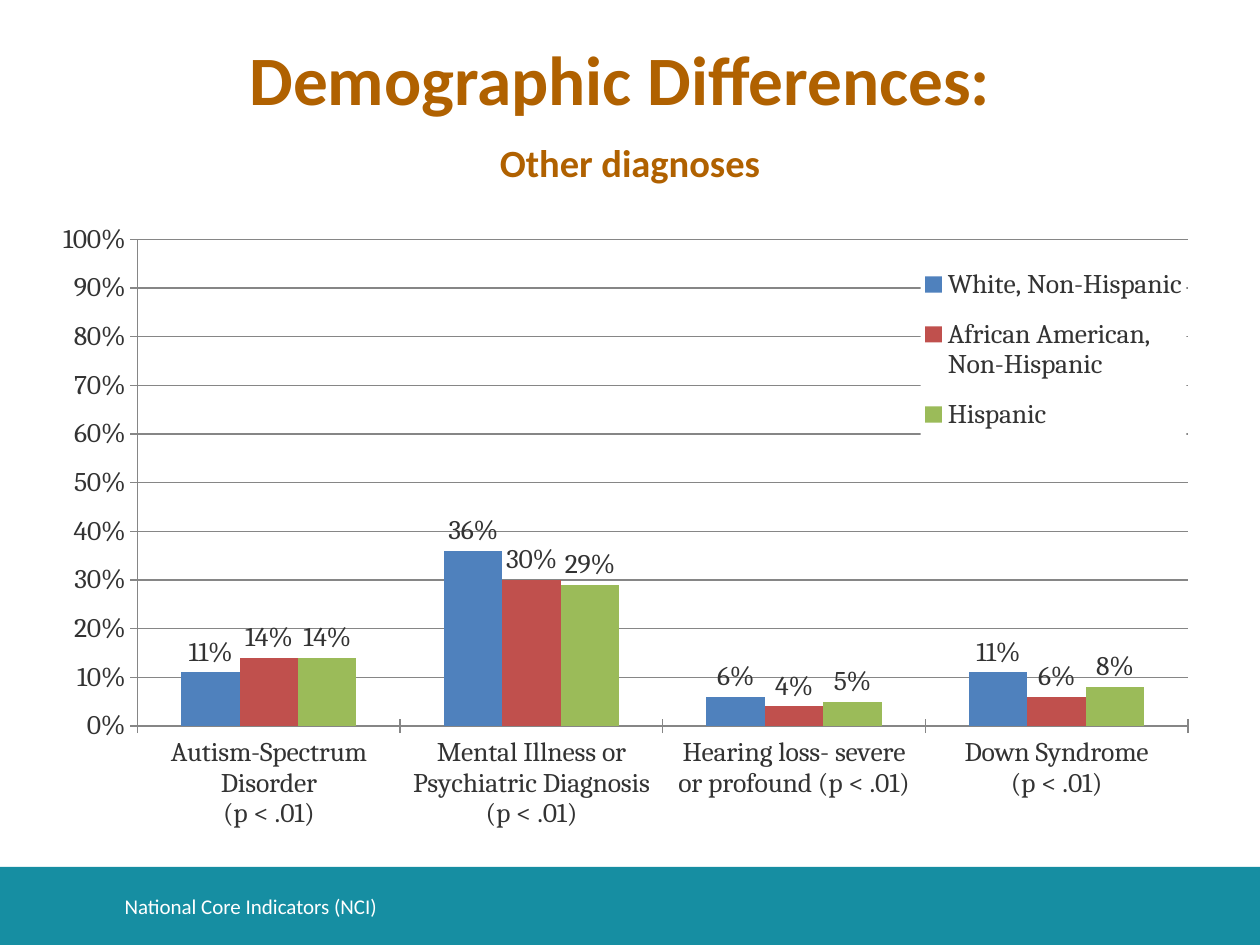
from pptx import Presentation
from pptx.chart.data import CategoryChartData
from pptx.dml.color import RGBColor
from pptx.enum.chart import XL_CHART_TYPE, XL_LABEL_POSITION, XL_LEGEND_POSITION, XL_TICK_MARK
from pptx.enum.shapes import MSO_SHAPE
from pptx.enum.text import MSO_ANCHOR, PP_ALIGN
from pptx.oxml import parse_xml
from pptx.oxml.ns import nsdecls
from pptx.util import Inches, Pt

TEAL = RGBColor(0x16, 0x8E, 0xA2)
BROWN = RGBColor(0xB0, 0x61, 0x00)
WHITE = RGBColor(0xFF, 0xFF, 0xFF)
DARK_GRAY = RGBColor(0x33, 0x33, 0x33)
AXIS_GRAY = RGBColor(0x86, 0x86, 0x86)
BLUE = RGBColor(0x4F, 0x81, 0xBD)
RED = RGBColor(0xC0, 0x50, 0x4D)
GREEN = RGBColor(0x9B, 0xBB, 0x59)

CATEGORIES = [
    "Autism-Spectrum Disorder\n(p < .01)",
    "Mental Illness or Psychiatric Diagnosis (p < .01)",
    "Hearing loss- severe or profound (p < .01)",
    "Down Syndrome\n(p < .01)",
]
SERIES = [
    ("White, Non-Hispanic", BLUE, (0.11, 0.36, 0.06, 0.11)),
    ("African American, Non-Hispanic", RED, (0.14, 0.30, 0.04, 0.06)),
    ("Hispanic", GREEN, (0.14, 0.29, 0.05, 0.08)),
]


def manual_layout(left, top, width, height, inner=False):
    """Return a chart layout element, in fractions of the chart area."""
    target = '<c:layoutTarget val="inner"/>' if inner else ""
    return parse_xml(
        f'<c:layout {nsdecls("c")}><c:manualLayout>{target}'
        '<c:xMode val="edge"/><c:yMode val="edge"/>'
        f'<c:x val="{left}"/><c:y val="{top}"/><c:w val="{width}"/><c:h val="{height}"/>'
        "</c:manualLayout></c:layout>"
    )


class DiagnosisSlide:
    text_font = "Calibri"
    chart_font = "Cambria"
    chart_size = Pt(16)

    def __init__(self, presentation):
        self.slide = presentation.slides.add_slide(presentation.slide_layouts[6])

    def band(self, left, top, width, height, color):
        shape = self.slide.shapes.add_shape(
            MSO_SHAPE.RECTANGLE, Inches(left), Inches(top), Inches(width), Inches(height))
        shape.shadow.inherit = False
        shape.fill.solid()
        shape.fill.fore_color.rgb = color
        shape.line.fill.background()

    def text(self, content, left, top, width, height, size, color,
             bold=False, align=PP_ALIGN.LEFT, line_spacing=None):
        box = self.slide.shapes.add_textbox(
            Inches(left), Inches(top), Inches(width), Inches(height))
        frame = box.text_frame
        frame.word_wrap = True
        frame.vertical_anchor = MSO_ANCHOR.MIDDLE
        paragraph = frame.paragraphs[0]
        paragraph.text = content
        paragraph.alignment = align
        paragraph.line_spacing = line_spacing
        self.style_font(paragraph.font, self.text_font, Pt(size), color)
        paragraph.font.bold = bold

    def style_font(self, font, name, size, color):
        font.name = name
        font.size = size
        font.color.rgb = color

    def style_line(self, line):
        line.color.rgb = AXIS_GRAY
        line.width = Pt(0.75)

    def column_chart(self, left, top, width, height):
        data = CategoryChartData(number_format="0%")
        data.categories = CATEGORIES
        for name, _, values in SERIES:
            data.add_series(name, values)
        chart = self.slide.shapes.add_chart(
            XL_CHART_TYPE.COLUMN_CLUSTERED, Inches(left), Inches(top),
            Inches(width), Inches(height), data).chart
        chart.has_title = False
        self.style_font(chart.font, self.chart_font, self.chart_size, DARK_GRAY)
        self.style_plot(chart)
        self.style_axes(chart)
        self.place_legend(chart)

    def style_plot(self, chart):
        plot = chart.plots[0]
        plot.gap_width = 150
        plot.overlap = 0
        plot.vary_by_categories = False
        for series, (_, color, _) in zip(plot.series, SERIES):
            series.format.fill.solid()
            series.format.fill.fore_color.rgb = color
            labels = series.data_labels
            labels.show_value = True
            labels.number_format = "0%"
            labels.number_format_is_linked = False
            labels.position = XL_LABEL_POSITION.OUTSIDE_END
            self.style_font(labels.font, self.chart_font, self.chart_size, DARK_GRAY)
        plot_area = chart.element.xpath(".//c:plotArea")[0]
        for layout in plot_area.xpath("./c:layout"):
            plot_area.remove(layout)
        plot_area.insert(0, manual_layout(0.055, 0.032, 0.937, 0.83, inner=True))

    def style_axes(self, chart):
        for axis in (chart.category_axis, chart.value_axis):
            axis.major_tick_mark = XL_TICK_MARK.CROSS
            axis.minor_tick_mark = XL_TICK_MARK.NONE
            self.style_line(axis.format.line)
            self.style_font(axis.tick_labels.font, self.chart_font, self.chart_size, DARK_GRAY)
        axis = chart.value_axis
        axis.minimum_scale = 0
        axis.maximum_scale = 1
        axis.major_unit = 0.1
        axis.tick_labels.number_format = "0%"
        axis.tick_labels.number_format_is_linked = False
        axis.has_major_gridlines = True
        self.style_line(axis.major_gridlines.format.line)

    def place_legend(self, chart):
        """Lay the legend over the plot on a white ground."""
        chart.has_legend = True
        legend = chart.legend
        legend.position = XL_LEGEND_POSITION.RIGHT
        legend.include_in_layout = False
        self.style_font(legend.font, self.chart_font, self.chart_size, DARK_GRAY)
        element = chart.element.xpath(".//c:legend")[0]
        for layout in element.xpath("./c:layout"):
            element.remove(layout)
        overlay = element.xpath("./c:overlay")[0]
        overlay.addprevious(manual_layout(0.757, 0.05, 0.237, 0.34))
        overlay.addnext(parse_xml(
            f'<c:spPr {nsdecls("c", "a")}><a:solidFill><a:srgbClr val="{WHITE}"/>'
            "</a:solidFill></c:spPr>"))


def main():
    presentation = Presentation()
    presentation.slide_width = Inches(10)
    presentation.slide_height = Inches(7.5)
    slide = DiagnosisSlide(presentation)
    slide.band(0, 6.88, 10, 0.62, TEAL)
    slide.text("Other diagnoses", 0.5, 1.01, 9, 0.56, 22, BROWN,
               bold=True, align=PP_ALIGN.CENTER)
    slide.text("National Core Indicators (NCI)", 0.89, 6.99, 7.4, 0.4, 12, WHITE)
    slide.text("Demographic Differences:", 0.42, 0.3, 9, 0.71, 39.6, BROWN,
               bold=True, align=PP_ALIGN.CENTER, line_spacing=0.9)
    slide.column_chart(0.5, 1.75, 9, 4.83)
    presentation.save("out.pptx")


if __name__ == "__main__":
    main()
